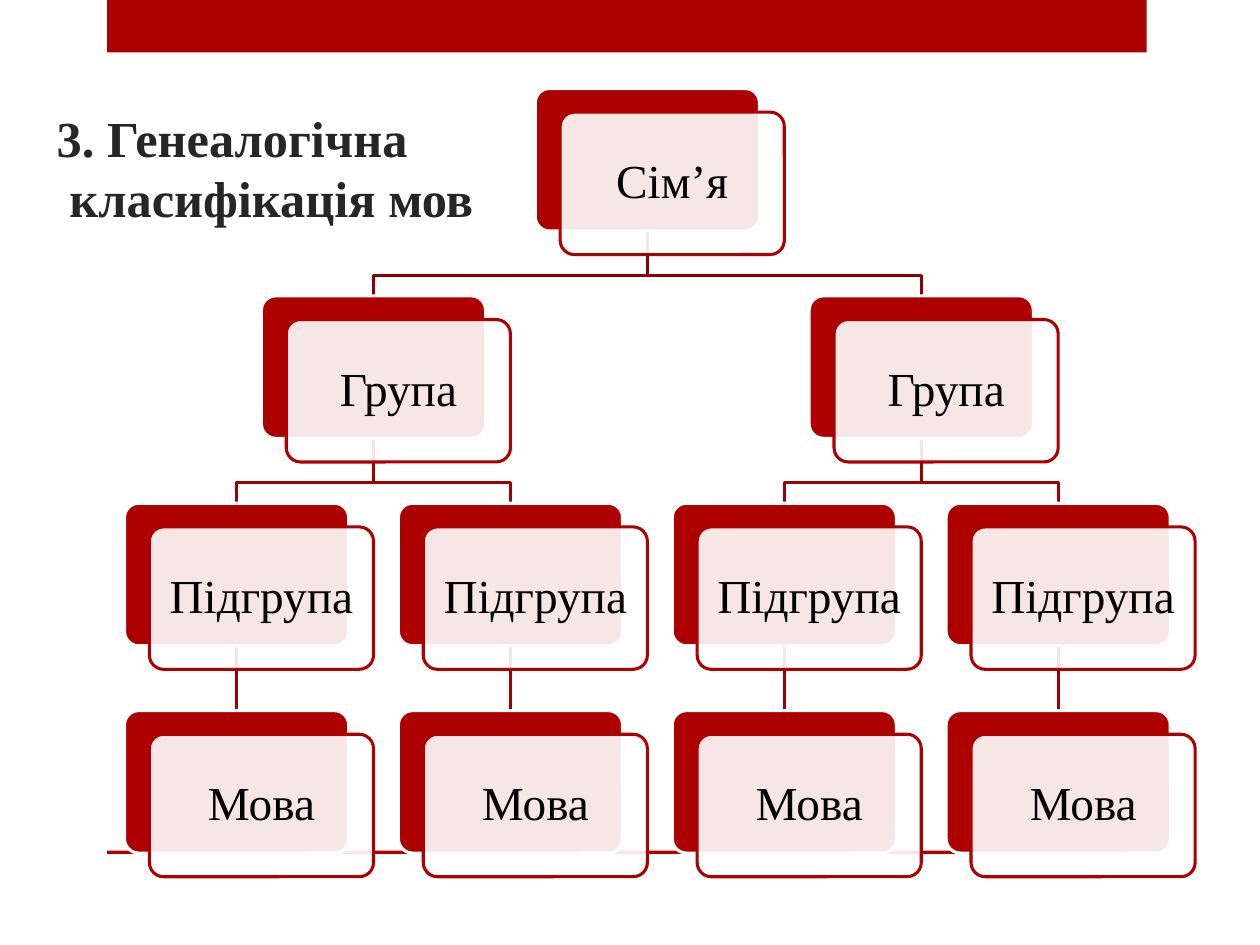
from lxml import etree
from pptx import Presentation
from pptx.dml.color import RGBColor
from pptx.enum.shapes import MSO_CONNECTOR as CONNECTOR, MSO_SHAPE as SHAPE
from pptx.enum.text import MSO_ANCHOR as ANCHOR, PP_ALIGN as ALIGN
from pptx.oxml.ns import qn
from pptx.util import Pt

COLORS = {
    "red": "AD0101",
    "top_link": "8B0101",
    "link": "9D0101",
    "white": "FFFFFF",
    "title": "262626",
    "text": "000000",
}
FONT = "Times New Roman"
LINE_WIDTH = 1.75

# Tree grid, in points
CARD_WIDTH, CARD_HEIGHT = 128.1, 81.4
FRONT_DX, FRONT_DY = 14.2, 13.5
FIRST_CENTER, COLUMN_STEP = 135.2, 156.5
FIRST_TOP, ROW_STEP = 50.6, 118.5
BEND_DROP = 25.3

# Each level: label and card positions in column units
LEVELS = [
    ("Сім’я", [1.5]),
    ("Група", [0.5, 2.5]),
    ("Підгрупа", [0, 1, 2, 3]),
    ("Мова", [0, 1, 2, 3]),
]


def color(name):
    return RGBColor.from_string(COLORS[name])


def center_x(column):
    return FIRST_CENTER + column * COLUMN_STEP


def row_top(row):
    return FIRST_TOP + row * ROW_STEP


def add_block(shapes, kind, left, top, width, height, fill, line=None):
    shape = shapes.add_shape(kind, Pt(left), Pt(top), Pt(width), Pt(height))
    shape.shadow.inherit = False
    shape.fill.solid()
    shape.fill.fore_color.rgb = color(fill)
    if line:
        shape.line.color.rgb = color(line)
        shape.line.width = Pt(LINE_WIDTH)
        shape.adjustments[0] = 0.1
    else:
        shape.line.fill.background()
    return shape


def add_title(slide):
    title = slide.shapes.title
    title.left, title.top, title.width, title.height = Pt(25.2), Pt(31.7), Pt(254.9), Pt(102.2)
    frame = title.text_frame
    frame.text = "3. Генеалогічна\v класифікація мов"
    frame.word_wrap = True
    frame.vertical_anchor = ANCHOR.BOTTOM
    paragraph = frame.paragraphs[0]
    paragraph.alignment = ALIGN.LEFT
    font = paragraph.font
    font.name, font.size, font.bold = FONT, Pt(28.8), True
    font.color.rgb = color("title")


def add_card(shapes, label, column, row):
    """Draw a red back card with a translucent labelled card over it."""
    left, top = center_x(column) - CARD_WIDTH / 2, row_top(row)
    back = add_block(shapes, SHAPE.ROUNDED_RECTANGLE, left, top,
                     CARD_WIDTH, CARD_HEIGHT, "red", "white")
    front = add_block(shapes, SHAPE.ROUNDED_RECTANGLE, left + FRONT_DX, top + FRONT_DY,
                      CARD_WIDTH, CARD_HEIGHT, "white", "red")
    fill_color = front.fill._xPr.find(qn("a:solidFill"))[0]
    etree.SubElement(fill_color, qn("a:alpha"), val="90000")

    frame = front.text_frame
    frame.text = label
    frame.word_wrap = True
    frame.vertical_anchor = ANCHOR.MIDDLE
    frame.margin_left = frame.margin_right = Pt(8)
    frame.margin_top = frame.margin_bottom = Pt(8)
    paragraph = frame.paragraphs[0]
    paragraph.alignment = ALIGN.CENTER
    paragraph.line_spacing = 0.9
    paragraph.font.name, paragraph.font.size = FONT, Pt(27)
    paragraph.font.color.rgb = color("text")
    return back


def add_elbow(shapes, parent_column, child_column, row):
    """Draw a bent link from a card in the row to one in the next row."""
    start, end = center_x(parent_column), center_x(child_column)
    top = row_top(row) + CARD_HEIGHT
    bend = top + BEND_DROP
    builder = shapes.build_freeform(Pt(start), Pt(top))
    builder.add_line_segments(
        [(Pt(start), Pt(bend)), (Pt(end), Pt(bend)), (Pt(end), Pt(row_top(row + 1)))],
        close=False)
    link = builder.convert_to_shape()
    link.shadow.inherit = False
    link.fill.background()
    link.line.color.rgb = color("link" if row else "top_link")
    link.line.width = Pt(LINE_WIDTH)


def add_straight(shapes, parent, child):
    link = shapes.add_connector(CONNECTOR.STRAIGHT, 0, 0, 0, 0)
    link.begin_connect(parent, 2)
    link.end_connect(child, 0)
    link.line.color.rgb = color("link")
    link.line.width = Pt(LINE_WIDTH)
    etree.SubElement(link._element.spPr, qn("a:effectLst"))


def add_tree(shapes):
    # The group of links is made first so that it lies behind the cards
    links = shapes.add_group_shape().shapes
    for row in (0, 1):
        parents, children = LEVELS[row][1], LEVELS[row + 1][1]
        for index, column in enumerate(children):
            add_elbow(links, parents[index // 2], column, row)

    cards = [[add_card(shapes, label, column, row) for column in columns]
             for row, (label, columns) in enumerate(LEVELS)]
    for subgroup, language in zip(cards[2], cards[3]):
        add_straight(links, subgroup, language)


def main():
    presentation = Presentation()
    presentation.slide_width, presentation.slide_height = Pt(720), Pt(540)
    slide = presentation.slides.add_slide(presentation.slide_layouts[5])

    # Top band and bottom rule
    add_block(slide.shapes, SHAPE.RECTANGLE, 61.2, 0, 594, 30, "red")
    add_block(slide.shapes, SHAPE.RECTANGLE, 61.2, 486, 594, 2, "red")

    add_title(slide)
    add_tree(slide.shapes)
    presentation.save("out.pptx")


if __name__ == "__main__":
    main()
